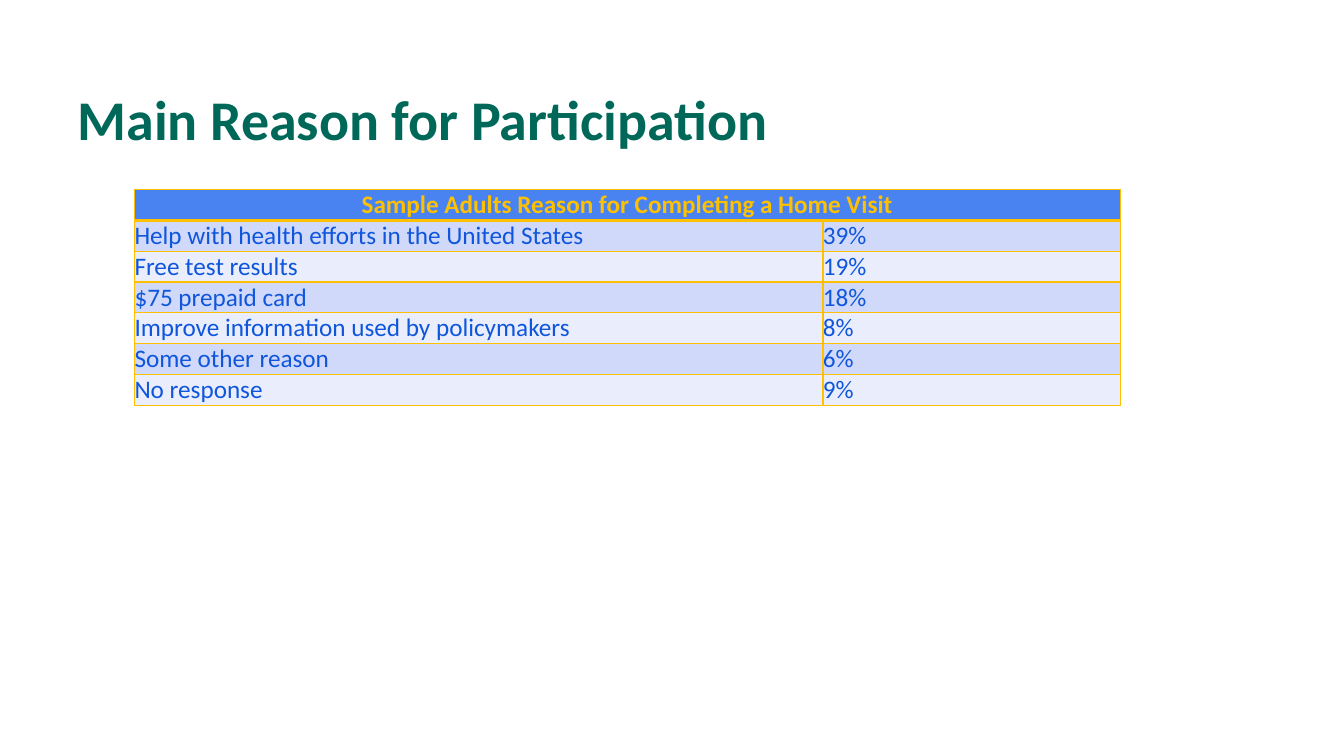
from lxml.etree import SubElement
from pptx import Presentation
from pptx.dml.color import RGBColor
from pptx.enum.text import MSO_ANCHOR as Anchor, PP_ALIGN as Align
from pptx.oxml.ns import qn
from pptx.util import Cm, Pt

COLORS = {
    "title": "006858",
    "gold": "FFC000",
    "header": "4983F2",
    "text": "0F56DC",
    "odd": "D0D9FA",
    "even": "E9EDFC",
}
HEADING = "Sample Adults Reason for Completing a Home Visit"
REASONS = [
    ("Help with health efforts in the United States", "39%"),
    ("Free test results", "19%"),
    ("$75 prepaid card", "18%"),
    ("Improve information used by policymakers", "8%"),
    ("Some other reason", "6%"),
    ("No response", "9%"),
]
ROW_HEIGHT = 0.77


def style_font(paragraph, size, color, bold):
    font = paragraph.font
    font.name, font.size, font.bold = "Calibri", Pt(size), bold
    font.color.rgb = RGBColor.from_string(COLORS[color])


def add_borders(cell, widths):
    properties = cell._tc.get_or_add_tcPr()
    for position, (side, width) in enumerate(widths.items()):
        line = SubElement(properties, qn(f"a:ln{side}"), w=str(Pt(width)))
        fill = SubElement(line, qn("a:solidFill"))
        SubElement(fill, qn("a:srgbClr"), val=COLORS["gold"])
        properties.insert(position, line)


prs = Presentation()
prs.slide_width, prs.slide_height = Cm(33.87), Cm(19.05)
slide = prs.slides.add_slide(prs.slide_layouts[5])

# Title
title = slide.shapes.title
title.left, title.top, title.width, title.height = Cm(1.7), Cm(0.76), Cm(30.48), Cm(3.18)
title.text_frame.text = "Main Reason for Participation"
title.text_frame.vertical_anchor = Anchor.BOTTOM
title_line = title.text_frame.paragraphs[0]
title_line.alignment = Align.LEFT
title_line.line_spacing = Pt(40)
style_font(title_line, 40, "title", True)

# Table of reasons
rows = [(HEADING, "")] + REASONS
reasons = slide.shapes.add_table(
    len(rows), 2, Cm(3.39), Cm(4.78), Cm(24.84), Cm(ROW_HEIGHT * len(rows))
).table
reasons.columns[0].width, reasons.columns[1].width = Cm(17.35), Cm(7.49)

for r, row in enumerate(rows):
    reasons.rows[r].height = Cm(ROW_HEIGHT)
    is_header = r == 0
    band = "header" if is_header else ("odd" if r % 2 else "even")
    for c, text in enumerate(row):
        cell = reasons.cell(r, c)
        cell.text = text
        cell.margin_left = cell.margin_right = cell.margin_top = cell.margin_bottom = 0
        cell.vertical_anchor = Anchor.MIDDLE
        cell.fill.solid()
        cell.fill.fore_color.rgb = RGBColor.from_string(COLORS[band])
        entry = cell.text_frame.paragraphs[0]
        entry.alignment = Align.CENTER if is_header else Align.LEFT
        style_font(entry, 18, "gold" if is_header else "text", is_header)
        # The rule under the heading is heavier
        add_borders(cell, {"L": 1, "R": 1, "T": 3 if r == 1 else 1, "B": 3 if is_header else 1})

reasons.cell(0, 0).merge(reasons.cell(0, 1))

prs.save("out.pptx")
